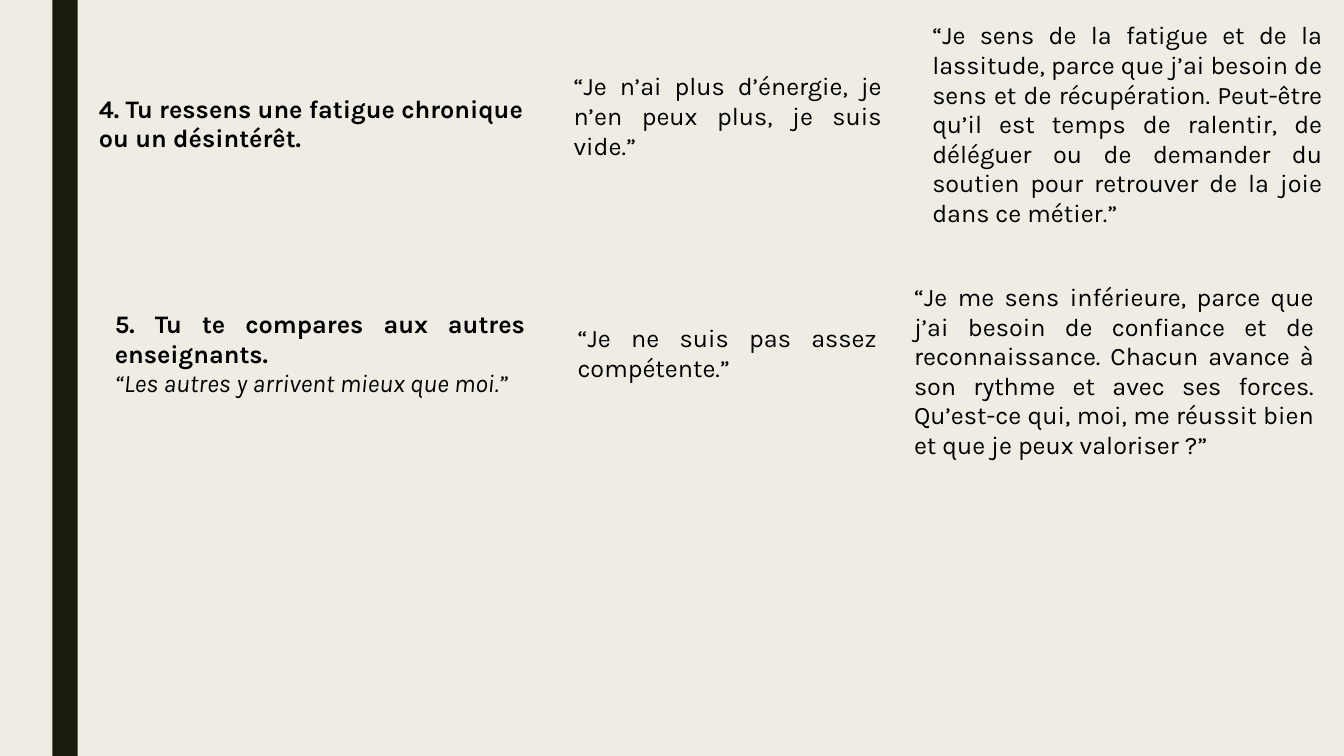
from dataclasses import dataclass

import lxml.etree
import pptx
import pptx.dml.color
import pptx.enum.shapes
import pptx.enum.text
import pptx.oxml.ns
import pptx.slide
import pptx.table
import pptx.util
from pptx.util import Cm


@dataclass(frozen=True)
class Theme:
    background: str = "EFEDE3"
    bar: str = "191B0E"
    text: str = "000000"
    font: str = "Karla"
    body_size: int = 18


@dataclass(frozen=True)
class Statement:
    left: float
    top: float
    width: float
    height: float
    text: str
    bold: bool = False
    quote: str = ""


THEME = Theme()
SLIDE_WIDTH, SLIDE_HEIGHT = 33.87, 19.05
BAR_LEFT, BAR_WIDTH = 1.32, 0.64

STATEMENTS = [
    Statement(2.24, 1.8, 11.2, 2.67,
              "4. Tu ressens une fatigue chronique ou un désintérêt.", bold=True),
    Statement(14.2, 1.3, 8.28, 3.3,
              "“Je n’ai plus d’énergie, je n’en peux plus, je suis vide.”"),
    Statement(23.24, 0.36, 10.34, 5.59,
              "“Je sens de la fatigue et de la lassitude, parce que j’ai besoin de sens "
              "et de récupération. Peut-être qu’il est temps de ralentir, de déléguer ou "
              "de demander du soutien pour retrouver de la joie dans ce métier.”"),
    Statement(2.64, 6.53, 10.85, 4.83,
              "5. Tu te compares aux autres enseignants.", bold=True,
              quote="“Les autres y arrivent mieux que moi.”"),
    Statement(14.3, 7.75, 8.05, 2.36, "“Je ne suis pas assez compétente.”"),
    Statement(22.78, 6.96, 10.59, 4.83,
              "“Je me sens inférieure, parce que j’ai besoin de confiance et de "
              "reconnaissance. Chacun avance à son rythme et avec ses forces. Qu’est-ce "
              "qui, moi, me réussit bien et que je peux valoriser ?”"),
]


def rgb(value: str) -> pptx.dml.color.RGBColor:
    return pptx.dml.color.RGBColor.from_string(value)


def clear_cell(cell: pptx.table._Cell) -> None:
    cell.fill.background()
    properties = cell._tc.get_or_add_tcPr()
    for position, side in enumerate(("lnL", "lnR", "lnT", "lnB")):
        border = lxml.etree.Element(pptx.oxml.ns.qn(f"a:{side}"))
        lxml.etree.SubElement(border, pptx.oxml.ns.qn("a:noFill"))
        properties.insert(position, border)


def add_bar(slide: pptx.slide.Slide) -> None:
    bar = slide.shapes.add_shape(
        pptx.enum.shapes.MSO_SHAPE.RECTANGLE,
        Cm(BAR_LEFT), Cm(0), Cm(BAR_WIDTH), Cm(SLIDE_HEIGHT))
    bar.shadow.inherit = False
    bar.fill.solid()
    bar.fill.fore_color.rgb = rgb(THEME.bar)
    bar.line.fill.background()


def add_statement(slide: pptx.slide.Slide, statement: Statement) -> None:
    table = slide.shapes.add_table(
        1, 1, Cm(statement.left), Cm(statement.top),
        Cm(statement.width), Cm(statement.height)).table
    table.first_row = False
    table.horz_banding = False

    cell = table.cell(0, 0)
    clear_cell(cell)
    cell.vertical_anchor = pptx.enum.text.MSO_ANCHOR.MIDDLE

    paragraph = cell.text_frame.paragraphs[0]
    paragraph.text = "\v".join(filter(None, (statement.text, statement.quote)))
    paragraph.alignment = pptx.enum.text.PP_ALIGN.JUSTIFY
    for position, run in enumerate(paragraph.runs):
        is_quote = position > 0
        run.font.name = THEME.font
        run.font.size = pptx.util.Pt(THEME.body_size)
        run.font.color.rgb = rgb(THEME.text)
        run.font.bold = statement.bold and not is_quote
        run.font.italic = is_quote


def main() -> None:
    presentation = pptx.Presentation()
    presentation.slide_width = Cm(SLIDE_WIDTH)
    presentation.slide_height = Cm(SLIDE_HEIGHT)
    slide = presentation.slides.add_slide(
        presentation.slide_layouts.get_by_name("Blank"))
    slide.background.fill.solid()
    slide.background.fill.fore_color.rgb = rgb(THEME.background)

    add_bar(slide)
    for statement in STATEMENTS:
        add_statement(slide, statement)
    presentation.save("out.pptx")


if __name__ == "__main__":
    main()
